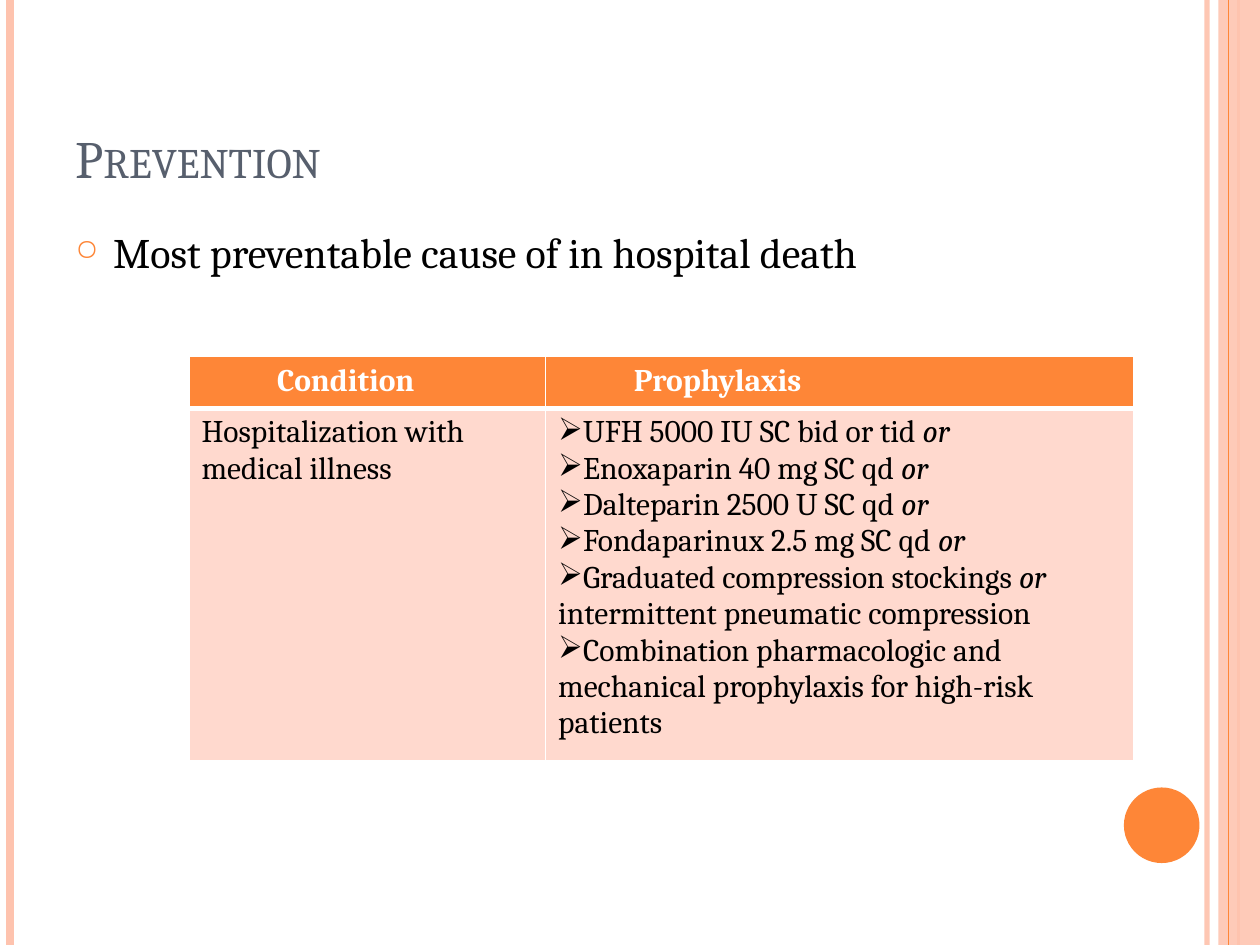
from lxml.etree import SubElement
from pptx import Presentation
from pptx.dml.color import RGBColor
from pptx.enum.shapes import MSO_CONNECTOR as Connector, MSO_SHAPE as Shape
from pptx.enum.text import MSO_ANCHOR as Anchor
from pptx.oxml import parse_xml
from pptx.oxml.ns import nsdecls, qn
from pptx.util import Inches, Pt

COLORS = {"orange": "FE8637", "peach": "FEC3AE", "pale": "FFD9CE",
          "slate": "575F6D", "black": "000000", "white": "FFFFFF"}
PROPHYLAXIS = [
    ["UFH 5000 IU SC bid or tid ", "or"],
    ["Enoxaparin 40 mg SC qd ", "or"],
    ["Dalteparin 2500 U SC qd ", "or"],
    ["Fondaparinux 2.5 mg SC qd ", "or"],
    ["Graduated compression stockings ", "or", " intermittent pneumatic compression"],
    ["Combination pharmacologic and mechanical prophylaxis for high-risk patients"],
]


class SlideBuilder:
    """Holds the font and the current slide, and draws each kind of element."""

    def __init__(self, slide, font="Cambria"):
        self.slide = slide
        self.font = font

    def color(self, name):
        return RGBColor.from_string(COLORS[name])

    def set_alpha(self, shape, percent):
        for color in shape._element.spPr.iter(qn("a:srgbClr")):
            SubElement(color, qn("a:alpha"), val=str(percent * 1000))

    def vertical_line(self, x, color, width, alpha=100):
        line = self.slide.shapes.add_connector(
            Connector.STRAIGHT, Inches(x), 0, Inches(x), Inches(7.5))
        line.line.color.rgb = self.color(color)
        line.line.width = Pt(width)
        SubElement(line._element.spPr, qn("a:effectLst"))
        if alpha < 100:
            self.set_alpha(line, alpha)

    def filled_shape(self, kind, box, color, alpha=100):
        shape = self.slide.shapes.add_shape(kind, *map(Inches, box))
        shape.shadow.inherit = False
        shape.fill.solid()
        shape.fill.fore_color.rgb = self.color(color)
        shape.line.fill.background()
        if alpha < 100:
            self.set_alpha(shape, alpha)

    def add_run(self, paragraph, text, color, size, **format_values):
        run = paragraph.add_run()
        run.text = text
        run.font.color.rgb = self.color(color)
        for name, value in {"name": self.font, "size": Pt(size), **format_values}.items():
            setattr(run.font, name, value)
        return run

    def add_bullet(self, paragraph, character, color=None, percent=100):
        properties = paragraph._p.get_or_add_pPr()
        if color:
            SubElement(SubElement(properties, qn("a:buClr")), qn("a:srgbClr"), val=COLORS[color])
        SubElement(properties, qn("a:buSzPct"), val=str(percent * 1000))
        SubElement(properties, qn("a:buChar"), char=character)

    def text_box(self, box, text, color, size, anchor=Anchor.TOP):
        frame = self.slide.shapes.add_textbox(*map(Inches, box)).text_frame
        frame.word_wrap = True
        frame.vertical_anchor = anchor
        paragraph = frame.paragraphs[0]
        return paragraph, self.add_run(paragraph, text, color, size)

    def title(self, box, text):
        _, run = self.text_box(box, text, "slate", 30, Anchor.BOTTOM)
        run.font._element.set("cap", "small")

    def body(self, box, text):
        paragraph, _ = self.text_box(box, text, "black", 24)
        paragraph.space_before = Pt(6)
        properties = paragraph._p.get_or_add_pPr()
        properties.set("marL", str(Inches(0.3)))
        properties.set("indent", str(Inches(-0.3)))
        self.add_bullet(paragraph, "○", "orange", 70)

    def style_cell(self, cell, color, bottom_width=1):
        cell.fill.solid()
        cell.fill.fore_color.rgb = self.color(color)
        widths = {"lnL": 1, "lnR": 1, "lnT": 1, "lnB": bottom_width}
        for index, (side, width) in enumerate(widths.items()):
            cell._tc.get_or_add_tcPr().insert(index, parse_xml(
                f'<a:{side} {nsdecls("a")} w="{Pt(width)}"><a:solidFill>'
                f'<a:srgbClr val="{COLORS["white"]}"/></a:solidFill></a:{side}>'))

    def table(self, box, widths, heights, headers, condition, options):
        table = self.slide.shapes.add_table(2, 2, *map(Inches, box)).table
        for column, width in zip(table.columns, widths):
            column.width = Inches(width)
        for row, height in zip(table.rows, heights):
            row.height = Inches(height)
        for cell, header in zip(table.rows[0].cells, headers):
            self.style_cell(cell, "orange", 3)
            cell.margin_left = Inches(0.7)
            self.add_run(cell.text_frame.paragraphs[0], header, "white", 18, bold=True)
        left, right = table.rows[1].cells
        for cell in (left, right):
            self.style_cell(cell, "pale")
        self.add_run(left.text_frame.paragraphs[0], condition, "black", 18, bold=False)
        frame = right.text_frame
        for index, parts in enumerate(options):
            paragraph = frame.add_paragraph() if index else frame.paragraphs[0]
            self.add_bullet(paragraph, "➢")
            for text in parts:
                self.add_run(paragraph, text, "black", 18, bold=False, italic=text == "or")


def main():
    presentation = Presentation()
    presentation.slide_width = Inches(10)
    presentation.slide_height = Inches(7.5)
    builder = SlideBuilder(presentation.slides.add_slide(presentation.slide_layouts[6]))
    builder.vertical_line(9.58, "peach", 3, 93)
    builder.vertical_line(0.08, "peach", 4.5)
    builder.vertical_line(9.83, "peach", 1.5)
    builder.filled_shape(Shape.RECTANGLE, (9.67, 0, 0.33, 7.5), "peach", 87)
    builder.vertical_line(9.75, "orange", 0.75)
    builder.filled_shape(Shape.OVAL, (8.92, 6.25, 0.6, 0.6), "orange")
    builder.title((0.5, 0.3, 8.17, 1.25), "Prevention")
    builder.body((0.5, 1.75, 8.17, 5.33), "Most preventable cause of in hospital death")
    builder.table((1.5, 2.83, 7.5, 3.1), (2.83, 4.67), (0.41, 2.69),
                  ("Condition", "Prophylaxis"),
                  "Hospitalization with medical illness", PROPHYLAXIS)
    presentation.save("out.pptx")


if __name__ == "__main__":
    main()
